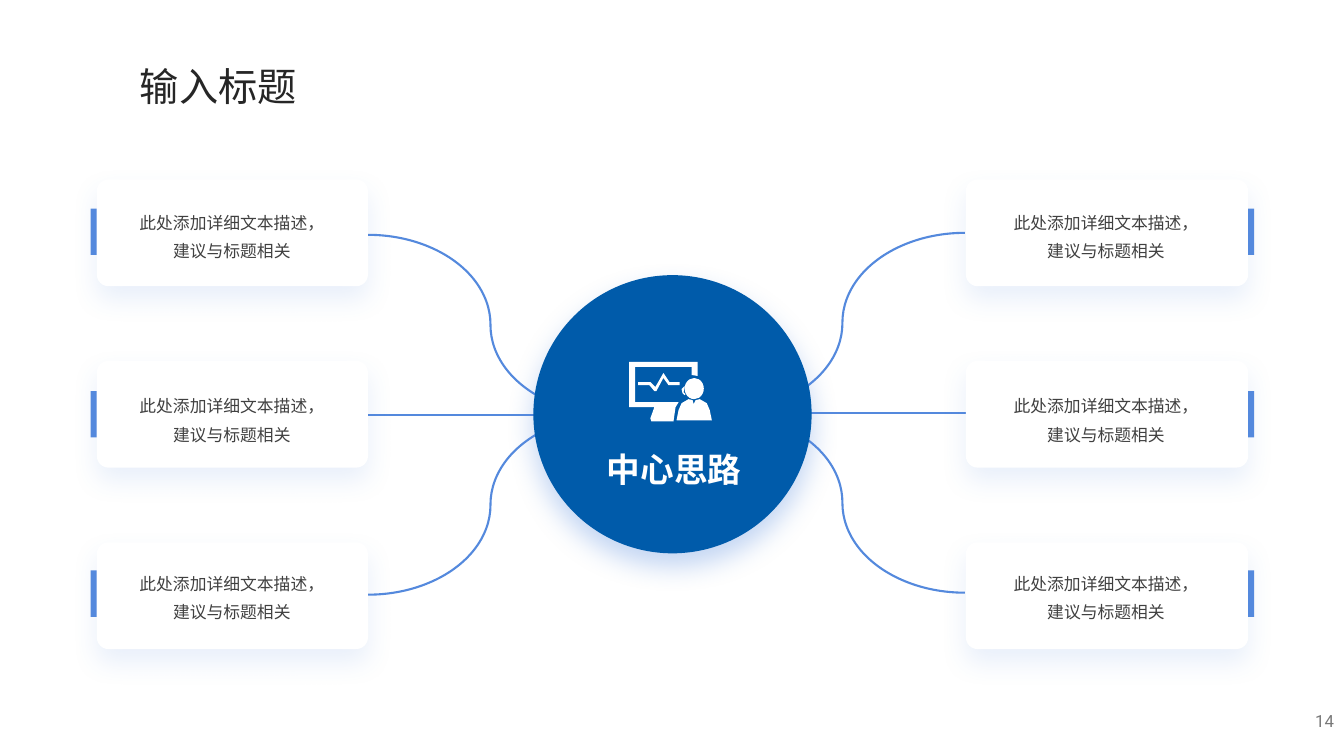
from dataclasses import dataclass

from lxml import etree
from pptx import Presentation
from pptx import util as u
from pptx.dml.color import RGBColor
from pptx.enum import shapes, text
from pptx.oxml import ns


@dataclass(frozen=True)
class Theme:
    accent: str = "5489DD"
    core: str = "005BAA"
    white: str = "FFFFFF"
    title_ink: str = "262626"
    body_ink: str = "404040"
    number_ink: str = "797979"
    cjk: str = "Noto Sans CJK SC"
    latin: str = "Roboto"
    title_size: float = 28
    core_size: float = 24
    small_size: float = 12
    line_width: float = 1.5


THEME = Theme()
SHAPE = shapes.MSO_SHAPE
ALIGN = text.PP_ALIGN
GROW = text.MSO_AUTO_SIZE.SHAPE_TO_FIT_TEXT

CARD_HEIGHT = 1.06
CARD_TOPS = [1.78 + 1.8 * row for row in range(3)]
TEXT_OFFSETS = [0.2, 0.22, 0.18]
BAR_OFFSETS = [0.29, 0.3, 0.28]
CARD_TEXT = "此处添加详细文本描述，建议与标题相关"

MONITOR = [(0, 0), (0.68, 0), (0.68, 0.14), (0.62, 0.13), (0.62, 0.05), (0.06, 0.05),
           (0.06, 0.4), (0.49, 0.4), (0.46, 0.45), (0.44, 0.59), (0.22, 0.59),
           (0.21, 0.56), (0.25, 0.45), (0, 0.45)]
PULSE = [(0.09, 0.2), (0.21, 0.2), (0.26, 0.25), (0.34, 0.11), (0.4, 0.2), (0.5, 0.2),
         (0.5, 0.23), (0.39, 0.23), (0.34, 0.16), (0.27, 0.29), (0.25, 0.29),
         (0.2, 0.23), (0.09, 0.23)]
HEADSET = [(0.55, 0.24), (0.55, 0.26), (0.54, 0.3), (0.56, 0.32), (0.55, 0.33),
           (0.53, 0.31), (0.52, 0.27)]
SHOULDERS = [(0.59, 0.37), (0.63, 0.38), (0.64, 0.42), (0.66, 0.38), (0.7, 0.37),
             (0.77, 0.41), (0.8, 0.48), (0.82, 0.58), (0.47, 0.58), (0.49, 0.48), (0.52, 0.41)]


def inches(*lengths):
    return [u.Inches(length) for length in lengths]


def apply(target, values):
    for name, value in values.items():
        setattr(target, name, value)


def paint(shape, color):
    shape.shadow.inherit = False
    shape.fill.solid()
    shape.fill.fore_color.rgb = RGBColor.from_string(color)
    shape.line.fill.background()
    return shape


def stroke(line):
    line.color.rgb = RGBColor.from_string(THEME.accent)
    line.width = u.Pt(THEME.line_width)


def add_solid(page, kind, box, color):
    return paint(page.shapes.add_shape(kind, *inches(*box)), color)


def add_outline(page, left, top, points):
    corners = [inches(left + x, top + y) for x, y in points]
    builder = page.shapes.build_freeform(*corners[0])
    builder.add_line_segments(corners[1:], close=True)
    return paint(builder.convert_to_shape(), THEME.white)


def add_soft_shadow(shape, opacity):
    effects = shape._element.spPr.find(ns.qn("a:effectLst"))
    shadow = etree.SubElement(effects, ns.qn("a:outerShdw"), blurRad=str(u.Pt(19)),
                              dist=str(u.Pt(9)), dir="5400000", algn="t", rotWithShape="0")
    color = etree.SubElement(shadow, ns.qn("a:srgbClr"), val=THEME.accent)
    etree.SubElement(color, ns.qn("a:alpha"), val=str(opacity * 1000))


def add_text(page, box, words, size, color, font=THEME.cjk, bold=False, frame=None, para=None):
    holder = page.shapes.add_textbox(*inches(*box)).text_frame
    apply(holder, {"word_wrap": True, "auto_size": GROW, **(frame or {})})
    line = holder.paragraphs[0]
    apply(line, para or {})
    span = line.add_run()
    span.text = words
    apply(span.font, {"name": font, "size": u.Pt(size), "bold": bold})
    span.font.color.rgb = RGBColor.from_string(color)
    etree.SubElement(span._r.get_or_add_rPr(), ns.qn("a:ea"), typeface=font)


def add_branches(page, box, card_edge, hub_edge, turn):
    left, top, width, height = box
    brace = page.shapes.add_shape(SHAPE.RIGHT_BRACE, *inches(*box))
    brace.shadow.inherit = False
    brace.fill.background()
    brace.adjustments[0] = 0.366
    brace.rotation = turn
    stroke(brace.line)
    middle = top + height / 2
    spoke = page.shapes.add_connector(
        shapes.MSO_CONNECTOR.STRAIGHT, *inches(card_edge, middle, hub_edge, middle))
    etree.SubElement(spoke._element.spPr, ns.qn("a:effectLst"))
    stroke(spoke.line)


def add_icon(page, left, top):
    for points in (MONITOR, PULSE, HEADSET, SHOULDERS):
        add_outline(page, left, top, points)
    add_solid(page, SHAPE.OVAL, (left + 0.55, top + 0.16, 0.19, 0.21), THEME.white)


def add_hub(page, left, top, size):
    disc = add_solid(page, SHAPE.OVAL, (left, top, size, size), THEME.core)
    add_soft_shadow(disc, 34)
    add_icon(page, left + 0.95, top + 0.86)
    add_text(page, (left + 0.63, top + 1.57, 1.69, 0.56), "中心思路", THEME.core_size,
             THEME.white, bold=True, para={"line_spacing": 1.25})


def add_card_column(page, left, width, text_left, bar_left):
    for top, text_offset, bar_offset in zip(CARD_TOPS, TEXT_OFFSETS, BAR_OFFSETS):
        card = add_solid(page, SHAPE.ROUNDED_RECTANGLE, (left, top, width, CARD_HEIGHT), THEME.white)
        card.adjustments[0] = 0.11
        add_soft_shadow(card, 12)
        add_text(page, (text_left, top + text_offset, 2.04, 0.67), CARD_TEXT, THEME.small_size,
                 THEME.body_ink, para={"alignment": ALIGN.CENTER, "line_spacing": 1.4})
        add_solid(page, SHAPE.RECTANGLE, (bar_left, top + bar_offset, 0.06, 0.46), THEME.accent)


def add_title(page, box):
    add_text(page, box, "输入标题", THEME.title_size, THEME.title_ink, frame={"word_wrap": False})


def add_page_number(page, box):
    add_text(page, box, "14", THEME.small_size, THEME.number_ink, font=THEME.latin,
             frame={"auto_size": text.MSO_AUTO_SIZE.NONE,
                    "vertical_anchor": text.MSO_ANCHOR.MIDDLE},
             para={"alignment": ALIGN.RIGHT})


def main():
    deck = Presentation()
    apply(deck, {"slide_width": u.Inches(13.33), "slide_height": u.Inches(7.5)})
    page = deck.slides.add_slide(deck.slide_layouts[6])
    add_branches(page, (7.14, 2.31, 2.43, 3.57), 9.58, 7.14, 180)
    add_branches(page, (3.65, 2.33, 2.43, 3.57), 3.65, 6.08, 0)
    add_hub(page, 5.29, 2.73, 2.76)
    add_card_column(page, 9.58, 2.8, 9.95, 12.38)
    add_card_column(page, 0.96, 2.69, 1.28, 0.9)
    add_page_number(page, (10.33, 6.95, 3, 0.4))
    add_title(page, (1.29, 0.57, 1.77, 0.57))
    deck.save("out.pptx")


if __name__ == "__main__":
    main()
